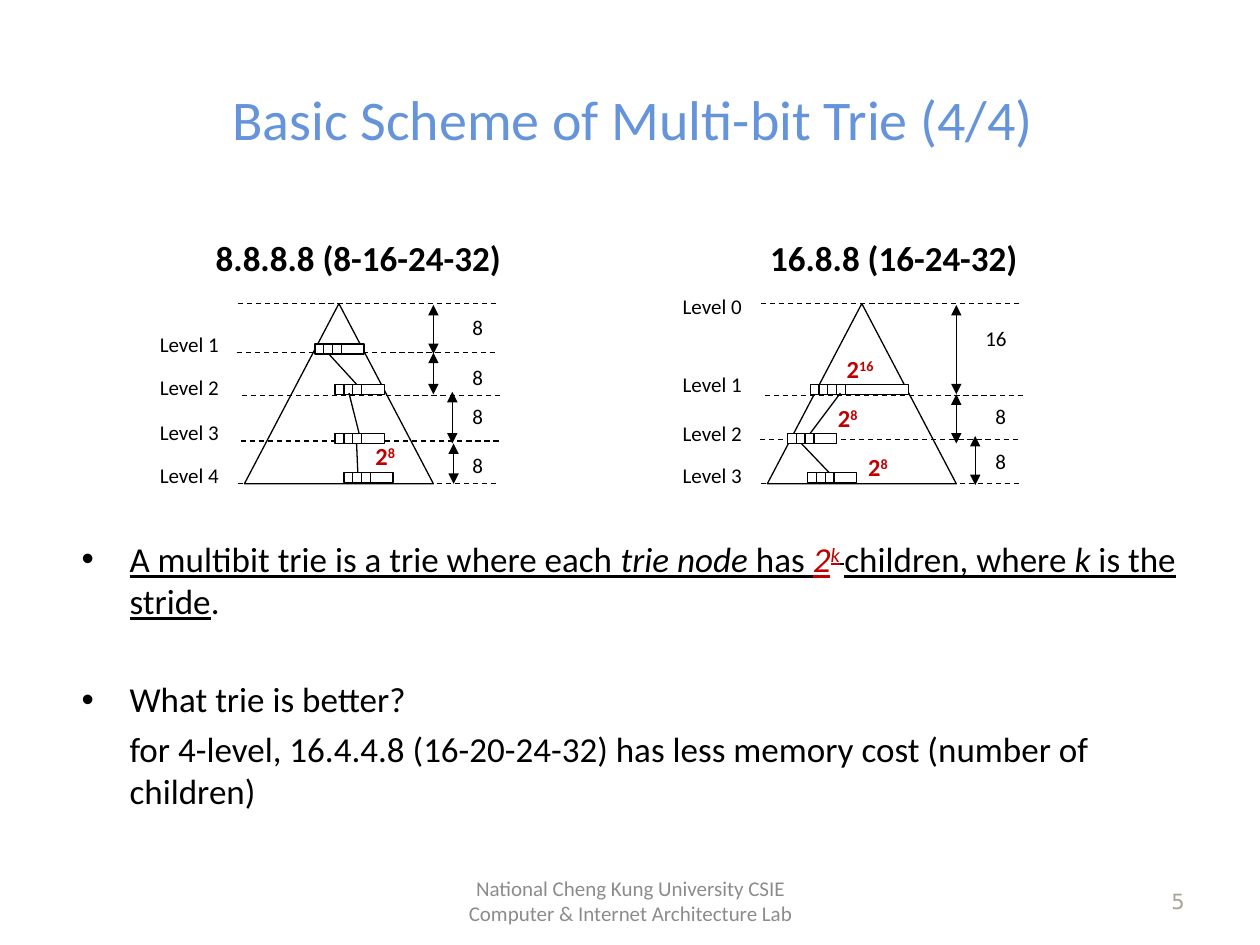
from dataclasses import dataclass

from lxml.etree import SubElement
from pptx import Presentation
from pptx.dml.color import RGBColor
from pptx.enum.dml import MSO_LINE
from pptx.enum.shapes import MSO_CONNECTOR, MSO_SHAPE
from pptx.enum.text import MSO_ANCHOR, PP_ALIGN
from pptx.oxml.ns import qn
from pptx.util import Inches, Pt


@dataclass(frozen=True)
class Theme:
    font: str = "Calibri"
    digit: str = "DejaVu Sans"
    ink: str = "000000"
    paper: str = "FFFFFF"
    blue: str = "6594DA"
    red: str = "C00000"
    gray: str = "8C8C8C"
    sand: str = "A7A399"
    title: int = 32
    body: int = 20
    power: int = 14
    small: int = 12
    line: float = 0.75


THEME = Theme()
TIGHT = (0, 0, 0.1, 0.05)
LOOSE = (0.1, 0.05, 0.1, 0.05)


def color(code):
    return RGBColor.from_string(code)


def style(run, size, ink=THEME.ink, bold=False, face=THEME.font):
    font = run.font
    font.name, font.size, font.bold = face, Pt(size), bold
    font.color.rgb = color(ink)


def lift(run):
    """Raise a run as a superscript."""
    run._r.get_or_add_rPr().set("baseline", "30000")


def add_frame(shapes, box, inset=LOOSE, anchor=MSO_ANCHOR.TOP):
    frame = shapes.add_textbox(*map(Inches, box)).text_frame
    frame.word_wrap = True
    frame.vertical_anchor = anchor
    (frame.margin_left, frame.margin_top,
     frame.margin_right, frame.margin_bottom) = map(Inches, inset)
    return frame


def add_text(shapes, box, text, size, ink=THEME.ink, bold=False,
             face=THEME.font, align=PP_ALIGN.LEFT, inset=LOOSE,
             anchor=MSO_ANCHOR.TOP):
    frame = add_frame(shapes, box, inset, anchor)
    frame.text = text
    para = frame.paragraphs[0]
    para.alignment = align
    style(para.runs[0], size, ink, bold, face)


def add_power(shapes, left, top, power):
    """Write two to the given power in red."""
    para = add_frame(shapes, (left, top, 0.46, 0.31), TIGHT).paragraphs[0]
    for text in ("2", power):
        run = para.add_run()
        run.text = text
        style(run, THEME.power, THEME.red, True)
    lift(run)


def add_line(shapes, start, end, dash=False, arrows=False):
    line = shapes.add_connector(
        MSO_CONNECTOR.STRAIGHT, *map(Inches, (*start, *end)))
    line.line.color.rgb = color(THEME.ink)
    line.line.width = Pt(THEME.line)
    if dash:
        line.line.dash_style = MSO_LINE.DASH
    if arrows:
        pen = line.line._get_or_add_ln()
        for tag in ("a:headEnd", "a:tailEnd"):
            SubElement(pen, qn(tag), type="triangle")
    SubElement(line._element.spPr, qn("a:effectLst"))


def add_solid(shapes, kind, box, fill=None):
    shape = shapes.add_shape(kind, *map(Inches, box))
    shape.shadow.inherit = False
    if fill:
        shape.fill.solid()
        shape.fill.fore_color.rgb = color(fill)
    else:
        shape.fill.background()
    shape.line.color.rgb = color(THEME.ink)
    shape.line.width = Pt(THEME.line)


def add_node(shapes, left, top, width=0.39, cells=(0.07, 0.14)):
    """Draw a node bar with narrow cells at the given offsets."""
    for x, wide in ((0, width), *((cell, 0.07) for cell in cells)):
        add_solid(shapes, MSO_SHAPE.RECTANGLE,
                  (left + x, top, wide, 0.08), THEME.paper)


def add_trie(slide, left, head, rules, names, spans, marks):
    """Draw one triangle with its level rules, names and stride arrows."""
    shapes = slide.shapes.add_group_shape().shapes
    add_solid(shapes, MSO_SHAPE.ISOSCELES_TRIANGLE, (left, 2.41, 1.5, 1.43))
    for x, y in rules:
        add_line(shapes, (x, y), (x + 2.07, y), dash=True)
    name_x, tops = names
    first = 5 - len(tops) if len(tops) == 4 and head[0] < 5 else 0
    for level, top in enumerate(tops, first):
        add_text(shapes, (name_x, top, 0.8, 0.3), f"Level {level}",
                 THEME.small)
    for x, top, low in spans:
        add_line(shapes, (x, top), (x, low), arrows=True)
    for x, y, bits in marks:
        add_text(shapes, (x, y, 0.46, 0.3), bits, THEME.small, inset=TIGHT)
    x, wide, text = head
    add_text(shapes, (x, 1.88, wide, 0.39), text, THEME.body, bold=True,
             align=PP_ALIGN.CENTER, inset=TIGHT)


def add_body(slide):
    """Write the bullets; each run is text plus flags u, i, r(ed), s(uper)."""
    items = [
        (True, 4, [("A multibit trie is a trie where each ", "u"),
                   ("trie node", "ui"), (" has ", "u"), ("2", "uir"),
                   ("k", "uirs"), (" ", "us"), ("children, where ", "u"),
                   ("k ", "ui"), ("is the stride", "u"), (".", "")]),
        (True, 32, [("What trie is better?", "")]),
        (False, 4, [("for 4-level, 16.4.4.8 (16-20-24-32) has less memory "
                     "cost (number of children)", "")]),
    ]
    frame = add_frame(slide.shapes, (0.55, 4.22, 8.98, 2.39))
    for index, (bullet, gap, runs) in enumerate(items):
        para = frame.add_paragraph() if index else frame.paragraphs[0]
        para.space_before = Pt(gap)
        props = para._p.get_or_add_pPr()
        props.set("marL", str(Inches(0.38)))
        if bullet:
            props.set("indent", str(-Inches(0.38)))
            SubElement(props, qn("a:buFont"), typeface="Arial")
            SubElement(props, qn("a:buChar"), char="•")
        for text, flags in runs:
            run = para.add_run()
            run.text = text
            style(run, THEME.body, THEME.red if "r" in flags else THEME.ink)
            run.font.underline = "u" in flags
            run.font.italic = "i" in flags
            if "s" in flags:
                lift(run)


def add_nodes(slide):
    shapes = slide.shapes
    for left, top in ((2.5, 2.73), (2.66, 3.05), (2.66, 3.44), (2.73, 3.75),
                      (6.25, 3.44), (6.41, 3.75)):
        add_node(shapes, left, top)
    add_node(shapes, 6.43, 3.05, 0.78, (0.07, 0.21))
    for start, end in (((2.61, 2.81), (2.83, 3.05)),
                       ((2.77, 3.12), (2.85, 3.44)),
                       ((2.83, 3.52), (2.84, 3.75)),
                       ((6.67, 3.12), (6.43, 3.44)),
                       ((6.36, 3.52), (6.58, 3.75))):
        add_line(shapes, start, end)
    for left, top, power in ((2.98, 3.5, "8"), (6.72, 2.81, "16"),
                             (6.65, 3.2, "8"), (6.89, 3.59, "8")):
        add_power(shapes, left, top, power)


def main():
    deck = Presentation()
    deck.slide_width, deck.slide_height = Inches(10), Inches(7.5)
    slide = deck.slides.add_slide(deck.slide_layouts[6])
    middle = MSO_ANCHOR.MIDDLE
    add_body(slide)
    add_text(slide.shapes, (0.55, 0.55, 8.95, 0.78),
             "Basic Scheme of Multi-bit Trie (4/4)", THEME.title, THEME.blue,
             align=PP_ALIGN.CENTER, anchor=middle)
    add_text(slide.shapes, (3.42, 6.95, 3.17, 0.4),
             "National Cheng Kung University CSIE "
             "Computer & Internet Architecture Lab", THEME.small, THEME.gray,
             align=PP_ALIGN.CENTER, anchor=middle)
    add_text(slide.shapes, (7.17, 6.95, 2.33, 0.4), "5", THEME.small,
             THEME.sand, face=THEME.digit, align=PP_ALIGN.RIGHT,
             anchor=middle)
    add_trie(slide, 6.09, (5.78, 2.73, "16.8.8 (16-24-32)"),
             ((6.04, 2.41), (6.07, 3.14), (6.03, 3.49), (6.04, 3.84)),
             (5.32, (2.28, 2.9, 3.29, 3.62)),
             ((7.59, 2.42, 3.13), (7.59, 3.13, 3.52), (7.74, 3.46, 3.85)),
             ((7.82, 2.58, "16"), (7.9, 3.2, "8"), (7.9, 3.56, "8")))
    add_trie(slide, 1.94, (1.33, 3.13, "8.8.8.8 (8-16-24-32)"),
             ((1.89, 2.41), (1.88, 2.8), (1.92, 3.14), (1.91, 3.5),
              (1.89, 3.84)),
             (1.17, (2.58, 2.92, 3.28, 3.62)),
             ((3.44, 2.42, 2.81), (3.44, 2.8, 3.13), (3.59, 3.11, 3.52),
              (3.6, 3.52, 3.84)),
             [(3.75, y, "8") for y in (2.5, 2.89, 3.2, 3.59)])
    add_nodes(slide)
    deck.save("out.pptx")


if __name__ == "__main__":
    main()
